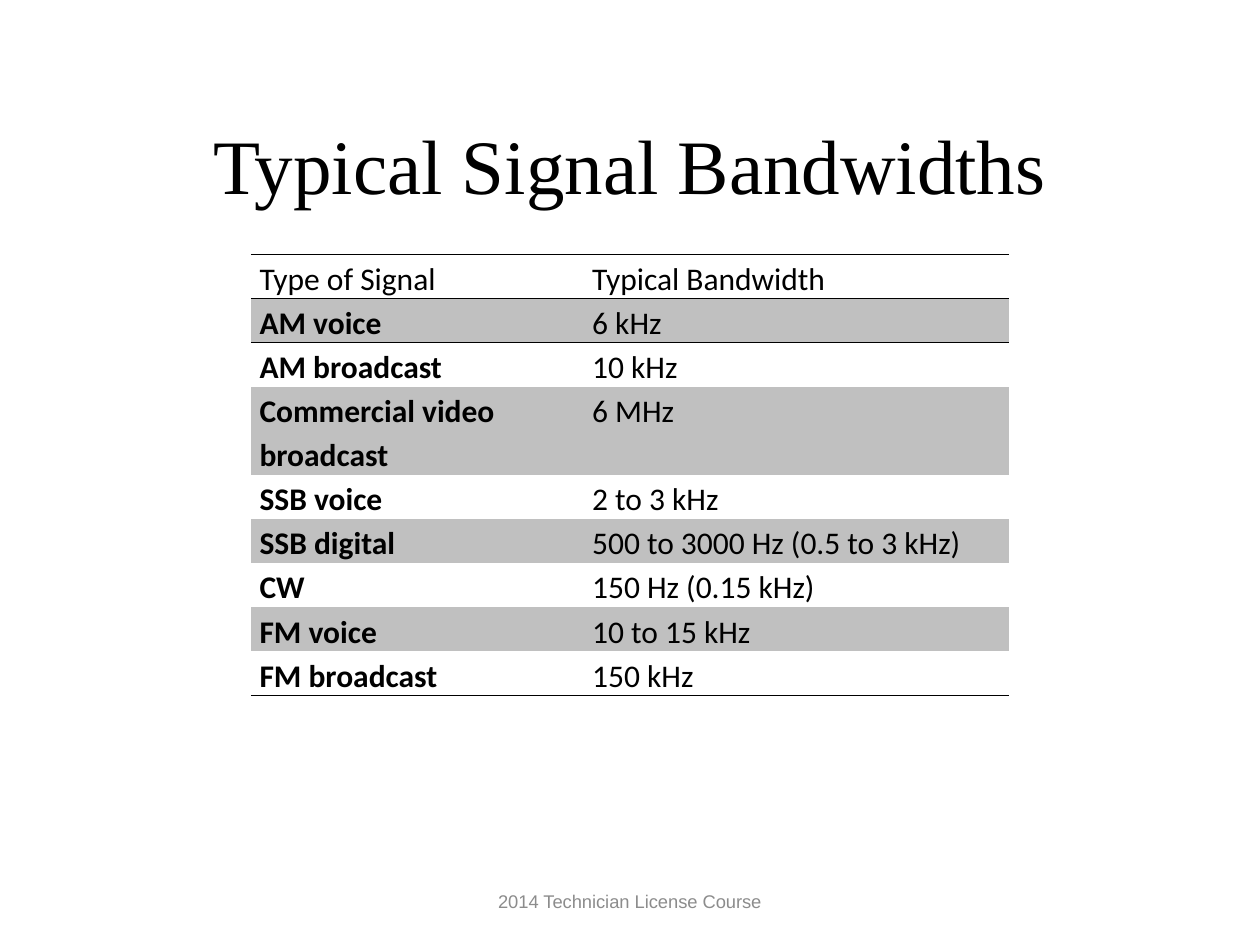
"""Build a slide with a table of typical signal bandwidths."""
from lxml.etree import fromstring
from pptx import Presentation
from pptx.dml.color import RGBColor
from pptx.enum.text import MSO_ANCHOR, PP_ALIGN
from pptx.oxml.ns import nsdecls, qn
from pptx.util import Inches, Pt

theme = {
    "ink": "000000", "band": "C0C0C0", "mute": "8C8C8C",
    "title": {"name": "Times New Roman", "size": Pt(44), "bold": False},
    "foot": {"name": "Arial", "size": Pt(10.5), "bold": False},
    "body": {"name": "Calibri", "size": Pt(18), "bold": False},
    "label": {"name": "Calibri", "size": Pt(18), "bold": True},
    "plain": "{2D5ABB26-0587-4C30-8999-92F81FD0307C}",
}
pad = {"margin_left": Inches(0.07), "margin_right": Inches(0.07),
       "margin_top": 0, "margin_bottom": 0}
rows = [
    ("Type of Signal", "Typical Bandwidth"),
    ("AM voice", "6 kHz"),
    ("AM broadcast", "10 kHz"),
    ("Commercial video broadcast", "6 MHz"),
    ("SSB voice", "2 to 3 kHz"),
    ("SSB digital", "500 to 3000 Hz (0.5 to 3 kHz)"),
    ("CW", "150 Hz (0.15 kHz)"),
    ("FM voice", "10 to 15 kHz"),
    ("FM broadcast", "150 kHz"),
]
last, tall, step = len(rows) - 1, 3, Inches(0.35)


def style(font, kind, tint):
    for key, value in theme[kind].items():
        setattr(font, key, value)
    font.color.rgb = RGBColor.from_string(theme[tint])


def rule(cell, side, spot):
    line = (f'<a:{side} {nsdecls("a")} w="{Pt(1)}"><a:solidFill>'
            f'<a:srgbClr val="{theme["ink"]}"/></a:solidFill></a:{side}>')
    cell._tc.get_or_add_tcPr().insert(spot, fromstring(line))


deck = Presentation()
deck.slide_width, deck.slide_height = Inches(10), Inches(7.5)
wide, high = deck.slide_width, deck.slide_height
slide = deck.slides.add_slide(deck.slide_layouts[6])

for text, kind, tint, top, span, deep in [
    ("2014 Technician License Course", "foot", "mute", 0.927, 0.32, 0.053),
    ("Typical Signal Bandwidths", "title", "ink", 0.09, 0.85, 0.167),
]:
    box = slide.shapes.add_textbox(int(wide * (1 - span) / 2), int(high * top),
                                   int(wide * span), int(high * deep))
    frame = box.text_frame
    frame.word_wrap, frame.vertical_anchor = True, MSO_ANCHOR.MIDDLE
    para = frame.paragraphs[0]
    para.text, para.alignment = text, PP_ALIGN.CENTER
    style(para.runs[0].font, kind, tint)

grid = slide.shapes.add_table(len(rows), 2, Inches(1.99), Inches(2.02),
                              Inches(6.02), step * (len(rows) + 1)).table
grid.first_row = grid.horz_banding = False
grid._tbl.tblPr.find(qn("a:tableStyleId")).text = theme["plain"]
for col, span in zip(grid.columns, (2.64, 3.38)):
    col.width = Inches(span)

for r, pair in enumerate(rows):
    grid.rows[r].height = step * (2 if r == tall else 1)
    for c, text in enumerate(pair):
        cell = grid.cell(r, c)
        for key, value in pad.items():
            setattr(cell, key, value)
        para = cell.text_frame.paragraphs[0]
        para.text, para.line_spacing = text, 1.15
        style(para.runs[0].font, "label" if r and not c else "body", "ink")
        if r % 2:
            cell.fill.solid()
            cell.fill.fore_color.rgb = RGBColor.from_string(theme["band"])
        else:
            cell.fill.background()
        if r in (0, last):
            rule(cell, "a:lnB"[2:], 0)
        if r in (0, 1):
            rule(cell, "lnT", 0)

deck.save("out.pptx")
